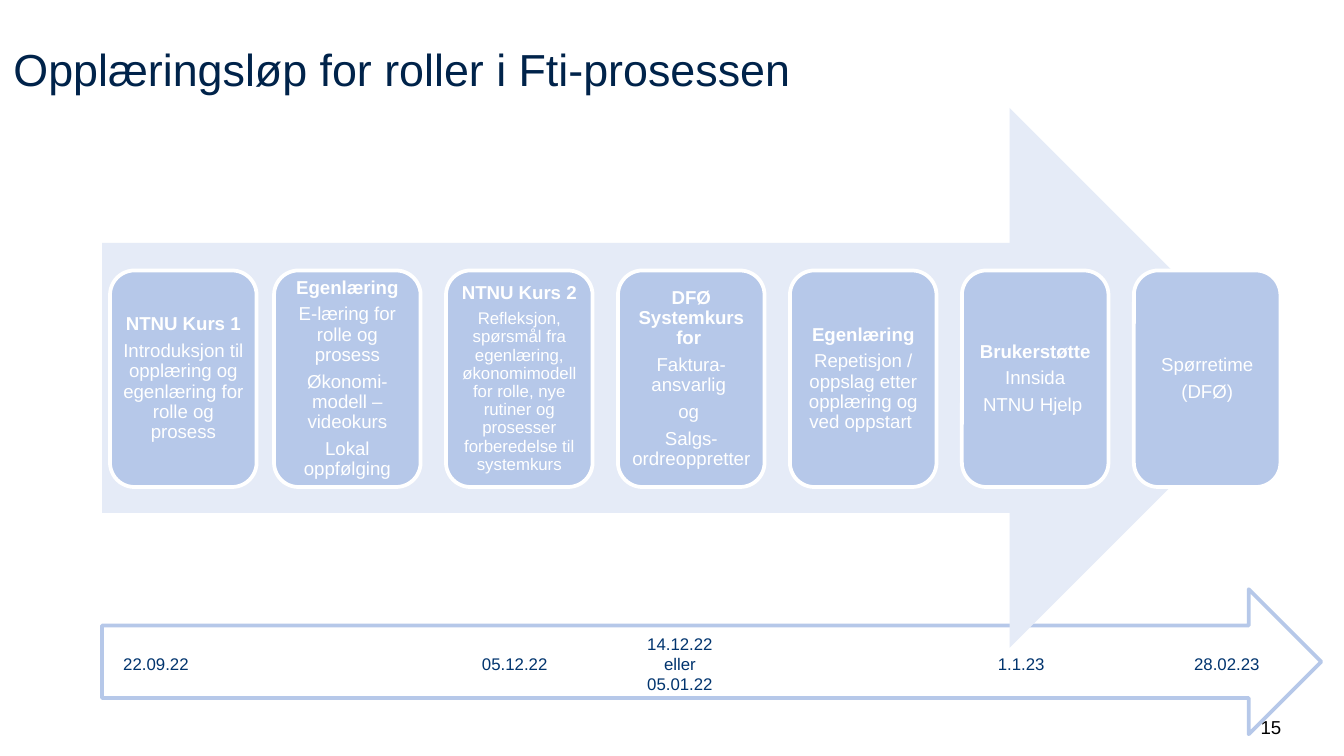
from pptx import Presentation
from pptx.dml.color import RGBColor
from pptx.enum import shapes, text
from pptx.util import Cm, Pt

FONT = "Arial"
NAVY = RGBColor(0x00, 0x23, 0x4A)
BLUE = RGBColor(0x01, 0x34, 0x6E)
LIGHT_BLUE = RGBColor(0xB6, 0xC8, 0xE9)
PALE_BLUE = RGBColor(0xE5, 0xEB, 0xF7)
WHITE = RGBColor(0xFF, 0xFF, 0xFF)
BLACK = RGBColor(0x00, 0x00, 0x00)

LEFT = text.PP_ALIGN.LEFT
CENTER = text.PP_ALIGN.CENTER
ARROW = shapes.MSO_SHAPE.RIGHT_ARROW
CARD = shapes.MSO_SHAPE.ROUNDED_RECTANGLE

CARD_START, CARD_PITCH = 1.93, 3.25
FIRST_CARD_LEFT = 2.08

STEPS = [
    ("NTNU Kurs 1", ["Introduksjon til opplæring og egenlæring for rolle og prosess"], 10),
    ("Egenlæring", ["E-læring for rolle og prosess", "Økonomi-modell – videokurs",
                    "Lokal oppfølging"], 10),
    ("NTNU Kurs 2", ["Refleksjon, spørsmål fra egenlæring, økonomimodell for rolle, "
                     "nye rutiner og prosesser forberedelse til systemkurs"], 9),
    ("DFØ Systemkurs for ", ["Faktura-ansvarlig ", "og ", "Salgs-ordreoppretter"], 10),
    ("Egenlæring", ["Repetisjon / oppslag etter opplæring og ved oppstart "], 10),
    ("Brukerstøtte", ["Innsida", "NTNU Hjelp "], 10),
    (None, ["Spørretime", "(DFØ)"], 10),
]

DATES = [
    (18.36, 12.22, 1.88, 0.64, CENTER, ["1.1.23"]),
    (2.08, 12.22, 1.88, 0.64, LEFT, ["22.09.22"]),
    (21.92, 12.22, 2.62, 0.64, CENTER, ["28.02.23 "]),
    (8.86, 12.22, 1.88, 0.64, LEFT, ["05.12.22"]),
    (11.91, 11.84, 1.88, 1.42, CENTER, ["14.12.22", "eller", "05.01.22"]),
]


class SlideBuilder:
    def __init__(self, presentation):
        self.slide = presentation.slides.add_slide(presentation.slide_layouts[5])

    def style(self, paragraph, size, color, alignment, bold=False):
        paragraph.alignment = alignment
        paragraph.font.name = FONT
        paragraph.font.size = Pt(size)
        paragraph.font.color.rgb = color
        paragraph.font.bold = bold

    def title(self, words, left, top, width, height):
        title = self.slide.shapes.title
        title.left, title.top = Cm(left), Cm(top)
        title.width, title.height = Cm(width), Cm(height)
        title.text_frame.text = words
        title.text_frame.auto_size = text.MSO_AUTO_SIZE.SHAPE_TO_FIT_TEXT
        self.style(title.text_frame.paragraphs[0], 24, NAVY, LEFT)

    def shape(self, kind, left, top, width, height, fill, line=None):
        shape = self.slide.shapes.add_shape(kind, Cm(left), Cm(top), Cm(width), Cm(height))
        shape.shadow.inherit = False
        shape.fill.solid()
        shape.fill.fore_color.rgb = fill
        if line is None:
            shape.line.fill.background()
        else:
            shape.line.color.rgb = line
            shape.line.width = Pt(2)
        return shape

    def card(self, left, heading, details, detail_size):
        frame = self.shape(CARD, left, 5.11, 2.77, 4.09, LIGHT_BLUE, WHITE).text_frame
        frame.word_wrap = True
        frame.vertical_anchor = text.MSO_ANCHOR.MIDDLE
        frame.margin_left = frame.margin_right = Cm(0.09)
        frame.margin_top = frame.margin_bottom = Cm(0.1)
        lines = [heading] + details if heading else details
        frame.text = "\n".join(lines)
        for paragraph, line in zip(frame.paragraphs, lines):
            is_heading = line == heading
            size = 10 if is_heading else detail_size
            self.style(paragraph, size, WHITE, CENTER, is_heading)
            paragraph.line_spacing = 0.9
            paragraph.space_after = Pt(0.35 * size)

    def label(self, left, top, width, height, alignment, lines, size=9, color=BLUE):
        box = self.slide.shapes.add_textbox(Cm(left), Cm(top), Cm(width), Cm(height))
        frame = box.text_frame
        frame.word_wrap = True
        frame.text = "\n".join(lines)
        for paragraph in frame.paragraphs:
            self.style(paragraph, size, color, alignment)


def main():
    presentation = Presentation()
    presentation.slide_width, presentation.slide_height = Cm(25.4), Cm(14.28)
    builder = SlideBuilder(presentation)

    builder.label(23.55, 13.39, 0.94, 0.76, CENTER, ["15"], 10, BLACK)
    builder.shape(ARROW, 1.93, 11.13, 23.04, 2.74, WHITE, LIGHT_BLUE)
    builder.title("Opplæringsløp for roller i Fti-prosessen", 0, 0.66, 23.39, 1.27)
    builder.shape(ARROW, 1.93, 2.04, 22.25, 10.2, PALE_BLUE)

    for index, step in enumerate(STEPS):
        left = CARD_START + index * CARD_PITCH if index else FIRST_CARD_LEFT
        builder.card(left, *step)
    for date in DATES:
        builder.label(*date)

    presentation.save("out.pptx")


if __name__ == "__main__":
    main()
